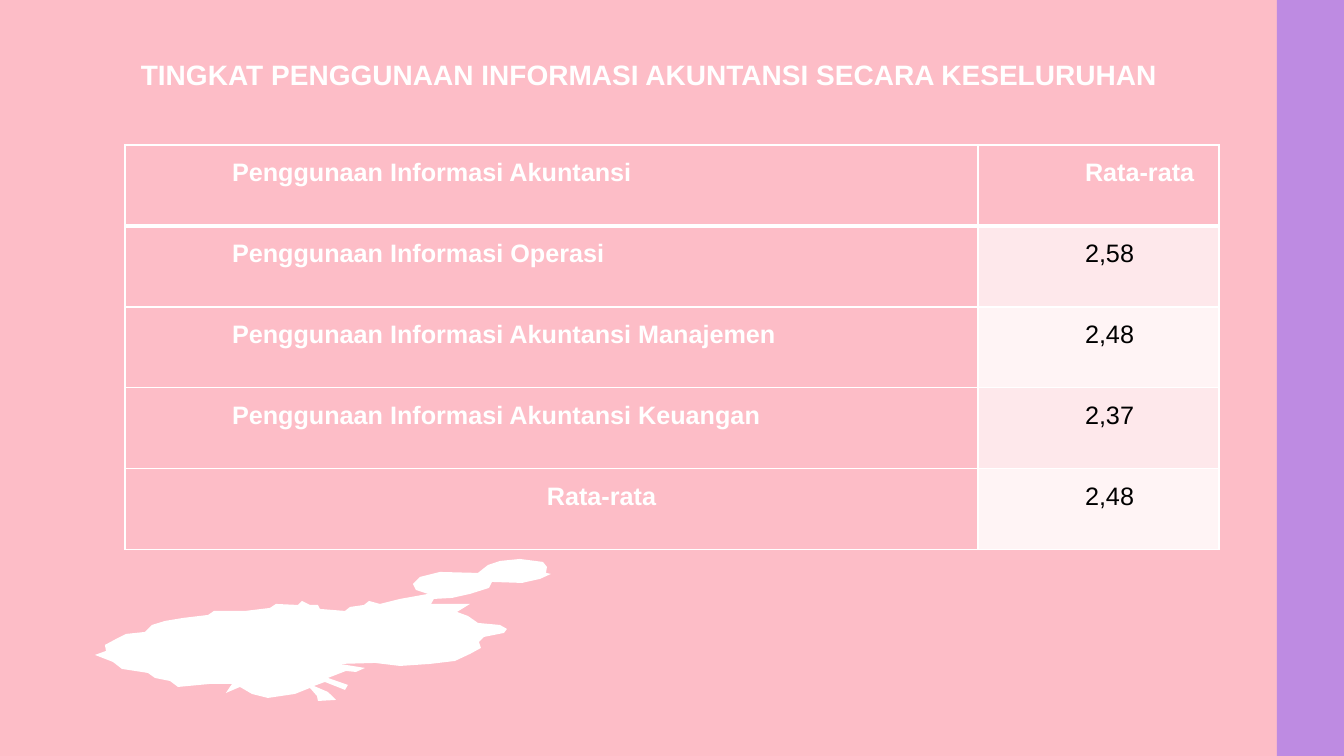
from lxml.etree import SubElement
from pptx import Presentation
from pptx.dml.color import RGBColor as RGB
from pptx.enum.shapes import MSO_SHAPE as Preset
from pptx.enum.text import MSO_ANCHOR as Anchor, MSO_AUTO_SIZE as AutoSize, PP_ALIGN as Align
from pptx.oxml.ns import qn
from pptx.util import Pt

PX = 12192000 // 1344
THEME = {
    "pink": RGB.from_string("FDBDC7"),
    "purple": RGB.from_string("BE8BE2"),
    "white": RGB.from_string("FFFFFF"),
    "black": RGB.from_string("000000"),
    "bands": [RGB.from_string("FEE8EB"), RGB.from_string("FFF4F5")],
    "font": "Arial",
    "title": Pt(20),
    "body": Pt(18),
}


def style_font(paragraph, size, color, bold):
    font = paragraph.font
    font.name, font.size, font.bold = THEME["font"], size, bold
    font.color.rgb = color


def add_border(cell, side, points):
    """Draw one white edge; side is L, R, T or B. Call before filling the cell."""
    edge = SubElement(cell._tc.get_or_add_tcPr(), qn("a:ln" + side), w=str(Pt(points)))
    fill = SubElement(edge, qn("a:solidFill"))
    SubElement(fill, qn("a:srgbClr"), val=str(THEME["white"]))


prs = Presentation()
prs.slide_width, prs.slide_height = 1344 * PX, 756 * PX
slide = prs.slides.add_slide(prs.slide_layouts[5])
slide.background.fill.solid()
slide.background.fill.fore_color.rgb = THEME["pink"]

# White brush blot, clockwise from its left tip
BLOT = [
    (95, 655), (106, 651), (105, 645), (118, 638), (126, 634), (145, 632), (152, 625),
    (165, 621), (183, 618), (208, 615), (214, 611), (245, 611), (270, 608), (276, 604),
    (298, 605), (302, 601), (310, 605), (318, 605), (320, 609), (345, 611), (350, 607),
    (364, 605), (369, 601), (380, 604), (400, 599), (428, 594), (416, 590), (413, 584),
    (420, 577), (440, 572), (478, 573), (488, 565), (500, 561), (520, 559), (543, 562),
    (547, 567), (546, 573), (551, 574), (540, 579), (522, 583), (492, 582), (489, 588),
    (470, 594), (452, 598), (434, 599), (431, 604), (470, 604), (457, 612), (468, 616),
    (478, 623), (500, 625), (507, 629), (504, 633), (484, 637), (479, 642), (481, 648),
    (470, 654), (455, 661), (430, 664), (400, 666), (375, 663), (340, 664), (365, 668),
    (356, 672), (346, 671), (328, 678), (348, 685), (345, 690), (325, 682), (314, 686),
    (328, 692), (336, 700), (318, 701), (317, 696), (310, 688), (295, 694), (268, 698),
    (252, 694), (240, 687), (226, 693), (232, 684), (210, 684), (178, 687), (170, 681),
    (155, 678), (148, 673), (122, 669), (113, 662),
]
outline = slide.shapes.build_freeform(*BLOT[0], scale=PX)
outline.add_line_segments(BLOT[1:], close=True)
blot = outline.convert_to_shape()
side_bar = slide.shapes.add_shape(Preset.RECTANGLE, 1277 * PX, 0, 67 * PX, 756 * PX)
for shape, color in [(blot, THEME["white"]), (side_bar, THEME["purple"])]:
    shape.shadow.inherit = False
    shape.fill.solid()
    shape.fill.fore_color.rgb = color
    shape.line.fill.background()

title = slide.shapes.title
title.left, title.top, title.width, title.height = 76 * PX, 57 * PX, 1144 * PX, 34 * PX
heading = title.text_frame
heading.text = "TINGKAT PENGGUNAAN INFORMASI AKUNTANSI SECARA KESELURUHAN"
heading.auto_size, heading.vertical_anchor = AutoSize.NONE, Anchor.TOP
heading.margin_left, heading.margin_right = 5 * PX, 3 * PX
heading.margin_top = heading.margin_bottom = 0
heading.paragraphs[0].alignment = Align.CENTER
style_font(heading.paragraphs[0], THEME["title"], THEME["white"], True)

USAGE = [
    ("Penggunaan Informasi Akuntansi", "Rata-rata"),
    ("Penggunaan Informasi Operasi", "2,58"),
    ("Penggunaan Informasi Akuntansi Manajemen", "2,48"),
    ("Penggunaan Informasi Akuntansi Keuangan", "2,37"),
    ("Rata-rata", "2,48"),
]
ROW_HEIGHT = 81
COLUMN_WIDTHS = [853, 241]
table = slide.shapes.add_table(
    len(USAGE), 2, 125 * PX, 145 * PX, sum(COLUMN_WIDTHS) * PX, len(USAGE) * ROW_HEIGHT * PX
).table
for column, width in zip(table.columns, COLUMN_WIDTHS):
    column.width = width * PX

for r, row in enumerate(USAGE):
    table.rows[r].height = ROW_HEIGHT * PX
    for c, wording in enumerate(row):
        cell = table.cell(r, c)
        is_value = r > 0 and c == 1
        cell.margin_left = cell.margin_right = 7 * PX
        cell.margin_top = cell.margin_bottom = 0
        for side in "LRTB":
            under_header = (r, side) in [(0, "B"), (1, "T")]
            add_border(cell, side, 3 if under_header else 1)
        cell.fill.solid()
        cell.fill.fore_color.rgb = THEME["bands"][(r - 1) % 2] if is_value else THEME["pink"]

        cell.text = wording
        entry = cell.text_frame.paragraphs[0]
        is_total_label = r == len(USAGE) - 1 and c == 0
        entry.alignment = Align.CENTER if is_total_label else Align.JUSTIFY
        entry.line_spacing = 1.5
        indents = entry._p.get_or_add_pPr()
        indents.set("marL", str(50 * PX))
        indents.set("indent", str(50 * PX))
        style_font(entry, THEME["body"], THEME["black" if is_value else "white"], not is_value)

prs.save("out.pptx")
